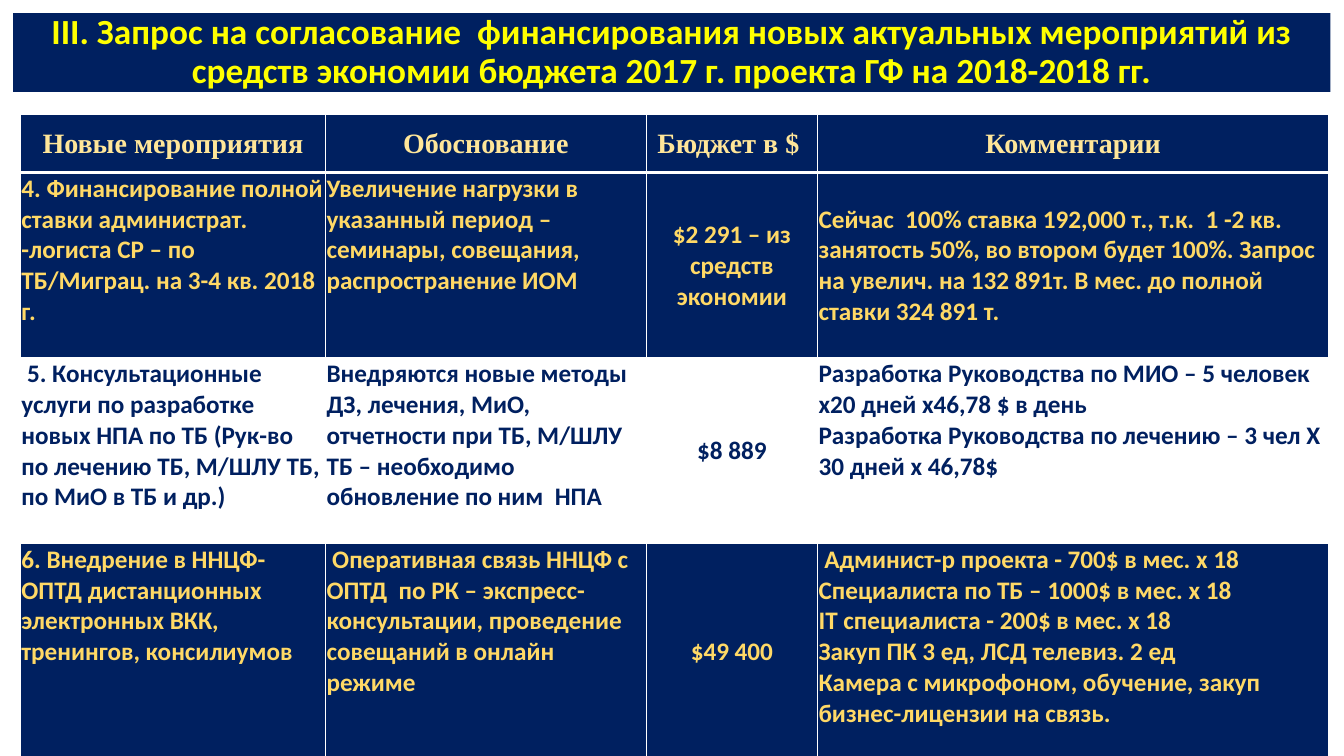
"""Builds the slide requesting approval of new activities from budget savings."""
from dataclasses import dataclass

from lxml import etree
from pptx import Presentation
from pptx import util as u
from pptx.dml.color import RGBColor
from pptx.enum import shapes, text
from pptx.oxml.ns import qn

LEFT, CENTER = text.PP_ALIGN.LEFT, text.PP_ALIGN.CENTER
TOP, MIDDLE = text.MSO_ANCHOR.TOP, text.MSO_ANCHOR.MIDDLE


@dataclass(frozen=True)
class Theme:
    """Colours, fonts and type sizes of the slide."""
    navy: str = "002060"
    white: str = "FFFFFF"
    yellow: str = "FFFF00"
    cream: str = "FFE699"
    gold: str = "FFD966"
    body_font: str = "Calibri"
    head_font: str = "Times New Roman"
    title_size: float = 25.2
    head_size: float = 20
    body_size: float = 18


class SlideBuilder:
    """Holds the theme and the current slide."""

    def __init__(self, prs, theme):
        """Adds a blank slide to the presentation."""
        self.theme = theme
        self.slide = prs.slides.add_slide(prs.slide_layouts[6])

    def add_lines(self, tf, lines, font, size, color, align, spacing=None):
        """Fills a text frame with one bold paragraph per line."""
        tf.word_wrap = True
        for i, line in enumerate(lines):
            p = tf.add_paragraph() if i else tf.paragraphs[0]
            p.alignment = align
            if spacing:
                p.line_spacing = spacing
            r = p.add_run()
            r.text = line
            r.font.name, r.font.size, r.font.bold = font, u.Pt(size), True
            r.font.color.rgb = RGBColor.from_string(color)

    def banner(self, box, title):
        """Draws the title on a filled rectangle."""
        t = self.theme
        sp = self.slide.shapes.add_shape(shapes.MSO_SHAPE.RECTANGLE, *map(u.Pt, box))
        sp.shadow.inherit = False
        sp.fill.solid()
        sp.fill.fore_color.rgb = RGBColor.from_string(t.navy)
        sp.line.fill.background()
        sp.text_frame.vertical_anchor = MIDDLE
        self.add_lines(sp.text_frame, [title], t.body_font, t.title_size, t.yellow, CENTER, 0.9)

    def borders(self, cell, widths):
        """Sets white cell borders from a mapping of side to width."""
        tc_pr = cell._tc.get_or_add_tcPr()
        for i, (side, width) in enumerate(widths.items()):
            ln = etree.Element(qn(f"a:ln{side}"), w=str(u.Pt(width)))
            fill = etree.SubElement(ln, qn("a:solidFill"))
            etree.SubElement(fill, qn("a:srgbClr"), val=self.theme.white)
            tc_pr.insert(i, ln)

    def cell(self, cell, lines, filled, font, size, color, align, anchor, bottom):
        """Styles and fills one table cell."""
        cell.margin_left = cell.margin_right = cell.margin_top = u.Pt(0.7)
        cell.margin_bottom = 0
        cell.vertical_anchor = anchor
        if filled:
            cell.fill.solid()
            cell.fill.fore_color.rgb = RGBColor.from_string(self.theme.navy)
        else:
            cell.fill.background()
        self.add_lines(cell.text_frame, lines, font, size, color, align)
        self.borders(cell, {"L": 1, "R": 1, "T": 1, "B": bottom})

    def table(self, left, top, widths, heights, header, rows):
        """Draws the activities table with alternating filled rows."""
        t = self.theme
        table = self.slide.shapes.add_table(
            len(heights), len(widths), u.Pt(left), u.Pt(top),
            u.Pt(sum(widths)), u.Pt(sum(heights))).table
        table.first_row = table.horz_banding = False
        for column, width in zip(table.columns, widths):
            column.width = u.Pt(width)
        for row, height in zip(table.rows, heights):
            row.height = u.Pt(height)
        for c, label in enumerate(header):
            self.cell(table.cell(0, c), [label], True, t.head_font, t.head_size,
                      t.cream, CENTER, MIDDLE, 3)
        for n, row in enumerate(rows, 1):
            filled = n % 2 == 1
            color = t.gold if filled else t.navy
            for c, lines in enumerate(row):
                align = CENTER if c == 2 else LEFT
                anchor = MIDDLE if c == 2 or (n, c) == (1, 3) else TOP
                self.cell(table.cell(n, c), lines, filled, t.body_font, t.body_size,
                          color, align, anchor, 1)


TITLE = ("III. Запрос на согласование  финансирования новых актуальных мероприятий "
         "из средств экономии бюджета 2017 г. проекта ГФ на 2018-2018 гг.")
HEADER = ["Новые мероприятия", "Обоснование", "Бюджет в $ ", "Комментарии"]
ACTIVITIES = [
    [["4. Финансирование полной ставки администрат. -логиста СР – по ТБ/Миграц. "
      "на 3-4 кв. 2018 г."],
     ["Увеличение нагрузки в указанный период – семинары, совещания, распространение ИОМ"],
     ["$2 291 – из средств экономии"],
     ["Сейчас  100% ставка 192,000 т., т.к.  1 -2 кв. занятость 50%, во втором будет 100%. "
      "Запрос на увелич. на 132 891т. В мес. до полной ставки 324 891 т."]],
    [[" 5. Консультационные услуги по разработке новых НПА по ТБ (Рук-во по лечению ТБ, "
      "М/ШЛУ ТБ, по МиО в ТБ и др.)"],
     ["Внедряются новые методы ДЗ, лечения, МиО, отчетности при ТБ, М/ШЛУ ТБ – "
      "необходимо обновление по ним  НПА"],
     ["$8 889"],
     ["Разработка Руководства по МИО – 5 человек х20 дней х46,78 $ в день",
      "Разработка Руководства по лечению – 3 чел Х 30 дней х 46,78$"]],
    [["6. Внедрение в ННЦФ-ОПТД дистанционных электронных ВКК,  тренингов, консилиумов"],
     [" Оперативная связь ННЦФ с ОПТД  по РК – экспресс-консультации, проведение "
      "совещаний в онлайн режиме"],
     ["$49 400"],
     [" Админист-р проекта - 700$ в мес. х 18",
      "Специалиста по ТБ – 1000$ в мес. х 18",
      "IT специалиста - 200$ в мес. х 18",
      "Закуп ПК 3 ед, ЛСД телевиз. 2 ед",
      "Камера с микрофоном, обучение, закуп бизнес-лицензии на связь."]],
]


def main():
    """Builds and saves the presentation."""
    prs = Presentation()
    prs.slide_width, prs.slide_height = u.Pt(960), u.Pt(540)
    s = SlideBuilder(prs, Theme())
    s.banner((9.4, 9.4, 941, 56.2), TITLE)
    s.table(14.6, 81.4, [218, 229, 122.5, 365], [41.8, 132.5, 132.5, 154.5],
            HEADER, ACTIVITIES)
    prs.save("out.pptx")


if __name__ == "__main__":
    main()
